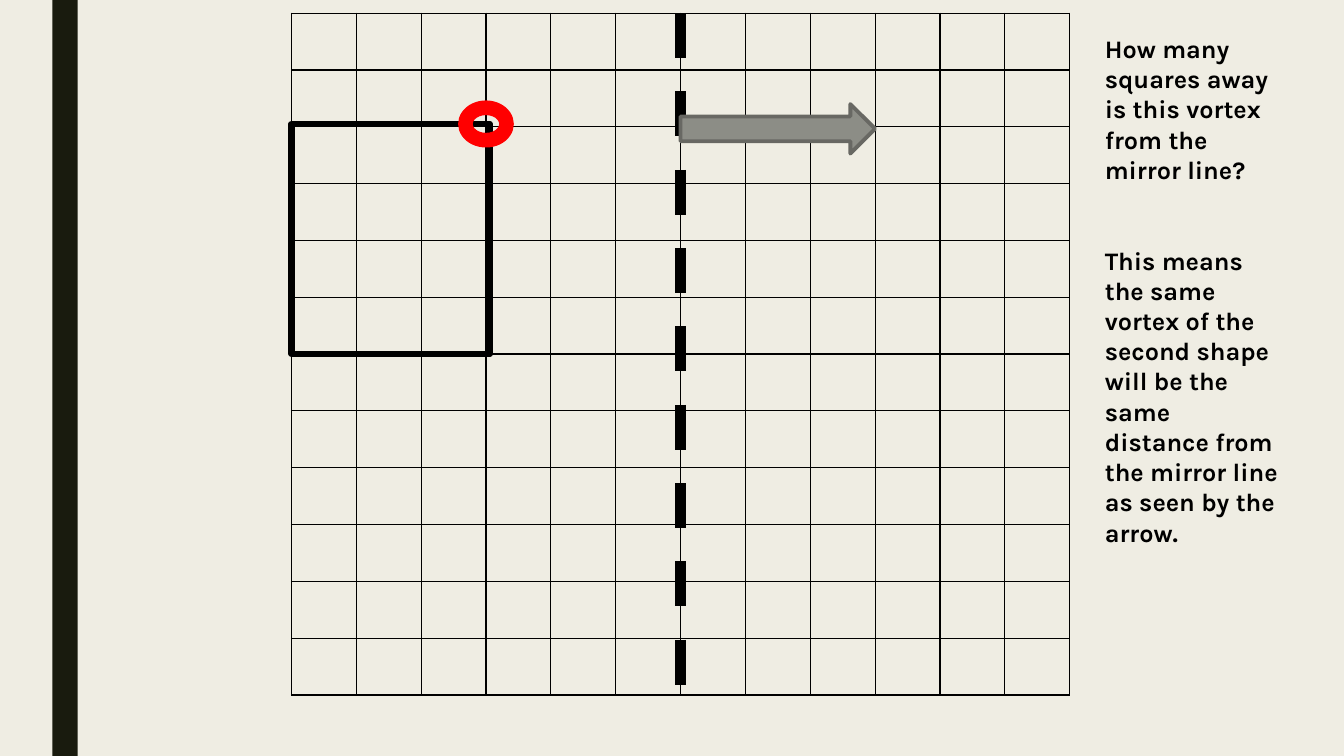
from lxml.etree import SubElement
from pptx import Presentation
from pptx.dml.color import RGBColor
from pptx.enum.dml import MSO_LINE_DASH_STYLE as Dash
from pptx.enum.shapes import MSO_CONNECTOR as Connector, MSO_SHAPE as Shape
from pptx.enum.text import MSO_AUTO_SIZE as AutoSize
from pptx.oxml.ns import qn
from pptx.util import Inches, Pt

COLORS = {
    "paper": "EFEDE3",
    "band": "191B0E",
    "ink": "000000",
    "vortex": "FF0000",
    "arrow": "8C8D86",
    "arrow_edge": "686863",
}
FONT = "Karla"
SLIDE_WIDTH, SLIDE_HEIGHT = 13.33, 7.5
GRID_LEFT, GRID_TOP, GRID_WIDTH, GRID_HEIGHT = 2.89, 0.13, 7.72, 6.77
CELLS = 12
MIRROR_COLUMN = 6
VORTEX_COLUMN, VORTEX_ROW = 3, 1.95
QUESTION = "How many squares away is this vortex from the mirror line?"
ANSWER = ("This means the same vortex of the second shape will be the same "
          "distance from the mirror line as seen by the arrow.")


def color(name):
    return RGBColor.from_string(COLORS[name])


def grid_x(column):
    return Inches(GRID_LEFT + column * GRID_WIDTH / CELLS)


def grid_y(row):
    return Inches(GRID_TOP + row * GRID_HEIGHT / CELLS)


def add_box(slide, kind, box, fill=None, line=None, weight=2.75):
    """Add a preset shape; box is left, top, right, bottom."""
    left, top, right, bottom = box
    shape = slide.shapes.add_shape(kind, left, top, right - left, bottom - top)
    shape.shadow.inherit = False
    if fill:
        shape.fill.solid()
        shape.fill.fore_color.rgb = color(fill)
    else:
        shape.fill.background()
    if line:
        shape.line.color.rgb = color(line)
        shape.line.width = Pt(weight)
    else:
        shape.line.fill.background()
    return shape


def grid_box(column, row, columns, rows):
    return (grid_x(column), grid_y(row),
            grid_x(column + columns), grid_y(row + rows))


def add_border(cell, side):
    border = SubElement(cell._tc.get_or_add_tcPr(), qn(f"a:{side}"),
                        w=str(Pt(1)))
    fill = SubElement(border, qn("a:solidFill"))
    SubElement(fill, qn("a:srgbClr"), val=COLORS["ink"])


def add_grid(slide):
    table = slide.shapes.add_table(
        CELLS, CELLS, grid_x(0), grid_y(0),
        Inches(GRID_WIDTH), Inches(GRID_HEIGHT)).table
    table.first_row = table.horz_banding = False
    for cell in table.iter_cells():
        for side in ("lnL", "lnR", "lnT", "lnB"):
            add_border(cell, side)
        cell.fill.background()


def add_mirror_line(slide):
    x = grid_x(MIRROR_COLUMN)
    mirror = slide.shapes.add_connector(
        Connector.STRAIGHT, x, grid_y(0), x, grid_y(CELLS))
    mirror.line.color.rgb = color("ink")
    mirror.line.width = Pt(8)
    mirror.line.dash_style = Dash.DASH
    SubElement(mirror._element.spPr, qn("a:effectLst"))


def add_explanation(slide):
    box = slide.shapes.add_textbox(
        Inches(10.86), Inches(0.28), Inches(1.93), Inches(4.64))
    text_frame = box.text_frame
    text_frame.word_wrap = True
    text_frame.auto_size = AutoSize.SHAPE_TO_FIT_TEXT
    text_frame.text = f"{QUESTION}\n{ANSWER}"
    for paragraph in text_frame.paragraphs:
        paragraph.line_spacing = Pt(21.6)
        for run in paragraph.runs:
            run.font.name = FONT
            run.font.size = Pt(18)
            run.font.bold = True
            run.font.color.rgb = color("ink")
    text_frame.paragraphs[1].space_before = Pt(43.2)


def main():
    presentation = Presentation()
    presentation.slide_width = Inches(SLIDE_WIDTH)
    presentation.slide_height = Inches(SLIDE_HEIGHT)
    slide = presentation.slides.add_slide(presentation.slide_layouts[6])
    slide.background.fill.solid()
    slide.background.fill.fore_color.rgb = color("paper")

    band = (Inches(0.52), 0, Inches(0.77), presentation.slide_height)
    add_box(slide, Shape.RECTANGLE, band, fill="band")
    add_grid(slide)
    add_box(slide, Shape.RECTANGLE, grid_box(0, VORTEX_ROW, 3.06, 4.04),
            line="ink", weight=4.5)
    add_mirror_line(slide)
    ring_columns, ring_rows = 0.8, 0.76
    ring = grid_box(VORTEX_COLUMN - ring_columns / 2,
                    VORTEX_ROW - ring_rows / 2, ring_columns, ring_rows)
    add_box(slide, Shape.DONUT, ring, fill="vortex", line="vortex")
    add_explanation(slide)
    arrow = grid_box(MIRROR_COLUMN, 1.6, MIRROR_COLUMN - VORTEX_COLUMN, 0.87)
    add_box(slide, Shape.RIGHT_ARROW, arrow, fill="arrow", line="arrow_edge")

    presentation.save("out.pptx")


if __name__ == "__main__":
    main()
